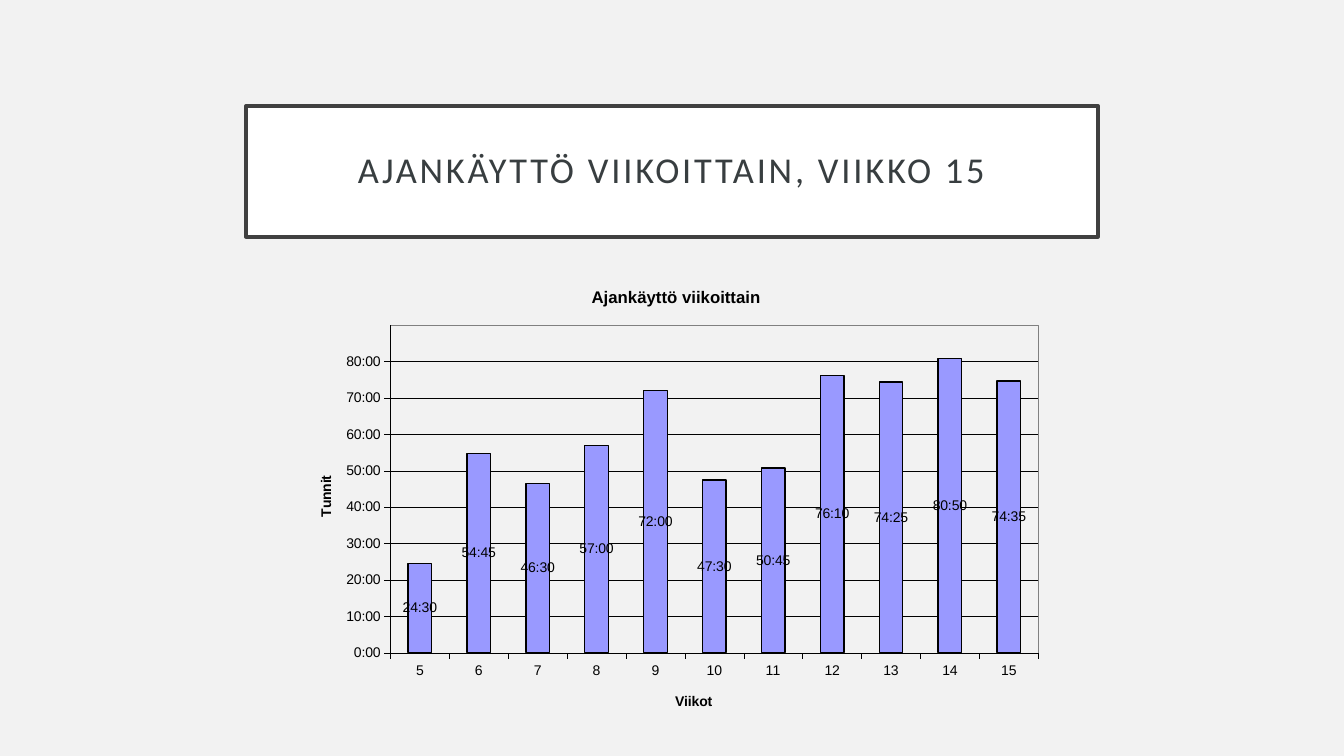
import lxml.etree
import pptx
import pptx.chart.data
import pptx.dml.color
import pptx.enum.chart
import pptx.enum.shapes
import pptx.enum.text
import pptx.oxml.ns
import pptx.util

COLORS = {
    "background": "F2F2F2",
    "panel": "FFFFFF",
    "frame": "404040",
    "heading": "383E40",
    "ink": "000000",
    "bar": "9999FF",
    "plot_edge": "808080",
}
SLIDE_WIDTH = pptx.util.Inches(13.33)
SLIDE_HEIGHT = pptx.util.Inches(7.5)
TIME_FORMAT = "[h]:mm"
FIRST_WEEK = 5
WEEKLY_TIMES = [
    "24:30", "54:45", "46:30", "57:00", "72:00", "47:30",
    "50:45", "76:10", "74:25", "80:50", "74:35",
]


def color(name):
    """Return the named palette colour."""
    return pptx.dml.color.RGBColor.from_string(COLORS[name])


def place(left, top, width, height):
    """Turn percentages of the slide into a position and size."""
    return (
        int(SLIDE_WIDTH * left / 100),
        int(SLIDE_HEIGHT * top / 100),
        int(SLIDE_WIDTH * width / 100),
        int(SLIDE_HEIGHT * height / 100),
    )


def days(time):
    """Convert hours and minutes to a fraction of days."""
    hours, minutes = map(int, time.split(":"))
    return round((hours + minutes / 60) / 24, 6)


def style_font(font, size=10, name="Arial", ink="ink", bold=False):
    """Set the look of a font."""
    font.size = pptx.util.Pt(size)
    font.name = name
    font.bold = bold
    font.color.rgb = color(ink)


def style_line(line, ink="ink", width=0.25):
    """Set the colour and width of a line."""
    line.color.rgb = color(ink)
    line.width = pptx.util.Pt(width)


def write_text(text_frame, text, spacing=0, line_spacing=None, **font_format):
    """Write one formatted paragraph into a text frame."""
    paragraph = text_frame.paragraphs[0]
    paragraph.alignment = pptx.enum.text.PP_ALIGN.CENTER
    if line_spacing:
        paragraph.line_spacing = line_spacing
    run = paragraph.add_run()
    run.text = text
    style_font(run.font, **font_format)
    if spacing:
        run.font._element.set("spc", str(spacing * 100))


def set_layout(element, index, **shares):
    """Fix a chart part at shares of the chart's size."""
    tag = pptx.oxml.ns.qn
    for old_layout in element.findall(tag("c:layout")):
        element.remove(old_layout)
    layout = lxml.etree.Element(tag("c:layout"))
    manual = lxml.etree.SubElement(layout, tag("c:manualLayout"))
    if "w" in shares:
        lxml.etree.SubElement(manual, tag("c:layoutTarget")).set("val", "inner")
    for mode in ("xMode", "yMode"):
        lxml.etree.SubElement(manual, tag(f"c:{mode}")).set("val", "edge")
    for key, share in shares.items():
        lxml.etree.SubElement(manual, tag(f"c:{key}")).set("val", str(share))
    element.insert(index, layout)


def add_chart_title(title, text, x, y, size=10):
    """Write a bold chart or axis title at a fixed place."""
    write_text(title.text_frame, text, size=size, bold=True)
    set_layout(title._element, 1, x=x, y=y)


def add_heading(slide, text):
    """Add the framed heading."""
    shape = slide.shapes.add_shape(
        pptx.enum.shapes.MSO_SHAPE.RECTANGLE, *place(18.3, 14, 63.4, 17.33)
    )
    shape.shadow.inherit = False
    shape.fill.solid()
    shape.fill.fore_color.rgb = color("panel")
    style_line(shape.line, "frame", 2.5)
    frame = shape.text_frame
    frame.word_wrap = True
    frame.vertical_anchor = pptx.enum.text.MSO_ANCHOR.MIDDLE
    for side in ("left", "top", "right", "bottom"):
        setattr(frame, f"margin_{side}", pptx.util.Inches(0.2))
    write_text(frame, text, spacing=2, line_spacing=0.9,
               size=26, name="Calibri", ink="heading")


def style_axis(axis, title, x, y):
    """Style an axis and its title."""
    axis.major_tick_mark = pptx.enum.chart.XL_TICK_MARK.OUTSIDE
    axis.minor_tick_mark = pptx.enum.chart.XL_TICK_MARK.NONE
    style_line(axis.format.line)
    style_font(axis.tick_labels.font)
    add_chart_title(axis.axis_title, title, x, y)


def style_value_axis(axis):
    """Set the hour scale and its gridlines."""
    axis.minimum_scale = 0
    axis.maximum_scale = days("90:00")
    axis.major_unit = days("10:00")
    axis.has_major_gridlines = True
    style_line(axis.major_gridlines.format.line)
    axis.tick_labels.number_format = TIME_FORMAT
    axis.tick_labels.number_format_is_linked = False


def style_bars(plot):
    """Style the bars and their value labels."""
    plot.gap_width = 150
    plot.overlap = 100
    plot.vary_by_categories = False
    series = plot.series[0]
    series.format.fill.solid()
    series.format.fill.fore_color.rgb = color("bar")
    style_line(series.format.line, width=1)
    labels = series.data_labels
    labels.show_value = True
    labels.number_format = TIME_FORMAT
    labels.number_format_is_linked = False
    labels.position = pptx.enum.chart.XL_LABEL_POSITION.CENTER
    style_font(labels.font)


def outline_plot(plot_area):
    """Draw a thin border around the plot area."""
    tag = pptx.oxml.ns.qn
    properties = lxml.etree.SubElement(plot_area, tag("c:spPr"))
    lxml.etree.SubElement(properties, tag("a:noFill"))
    line = lxml.etree.SubElement(properties, tag("a:ln"), w="3175")
    fill = lxml.etree.SubElement(line, tag("a:solidFill"))
    lxml.etree.SubElement(fill, tag("a:srgbClr"), val=COLORS["plot_edge"])


def add_hours_chart(slide):
    """Add the chart of hours per week."""
    data = pptx.chart.data.CategoryChartData(number_format=TIME_FORMAT)
    data.categories = [str(FIRST_WEEK + step) for step in range(len(WEEKLY_TIMES))]
    data.add_series("Series 1", [days(time) for time in WEEKLY_TIMES])
    chart = slide.shapes.add_chart(
        pptx.enum.chart.XL_CHART_TYPE.COLUMN_STACKED,
        *place(21.68, 35.07, 56.71, 61.07), data
    ).chart
    style_font(chart.font)
    chart.has_legend = False
    chart.has_title = True
    add_chart_title(chart.chart_title, "Ajankäyttö viikoittain", 0.39, 0.04, size=12)
    style_axis(chart.category_axis, "Viikot", 0.5, 0.92)
    style_axis(chart.value_axis, "Tunnit", 0.03, 0.45)
    style_value_axis(chart.value_axis)
    style_bars(chart.plots[0])
    plot_area = chart._chartSpace.chart.plotArea
    set_layout(plot_area, 0, x=0.13, y=0.13, w=0.85, h=0.71)
    outline_plot(plot_area)


def main():
    """Build the slide and save it."""
    presentation = pptx.Presentation()
    presentation.slide_width = SLIDE_WIDTH
    presentation.slide_height = SLIDE_HEIGHT
    slide = presentation.slides.add_slide(presentation.slide_layouts[6])
    slide.background.fill.solid()
    slide.background.fill.fore_color.rgb = color("background")
    add_heading(slide, "AJANKÄYTTÖ VIIKOITTAIN, VIIKKO 15")
    add_hours_chart(slide)
    presentation.save("out.pptx")


if __name__ == "__main__":
    main()
